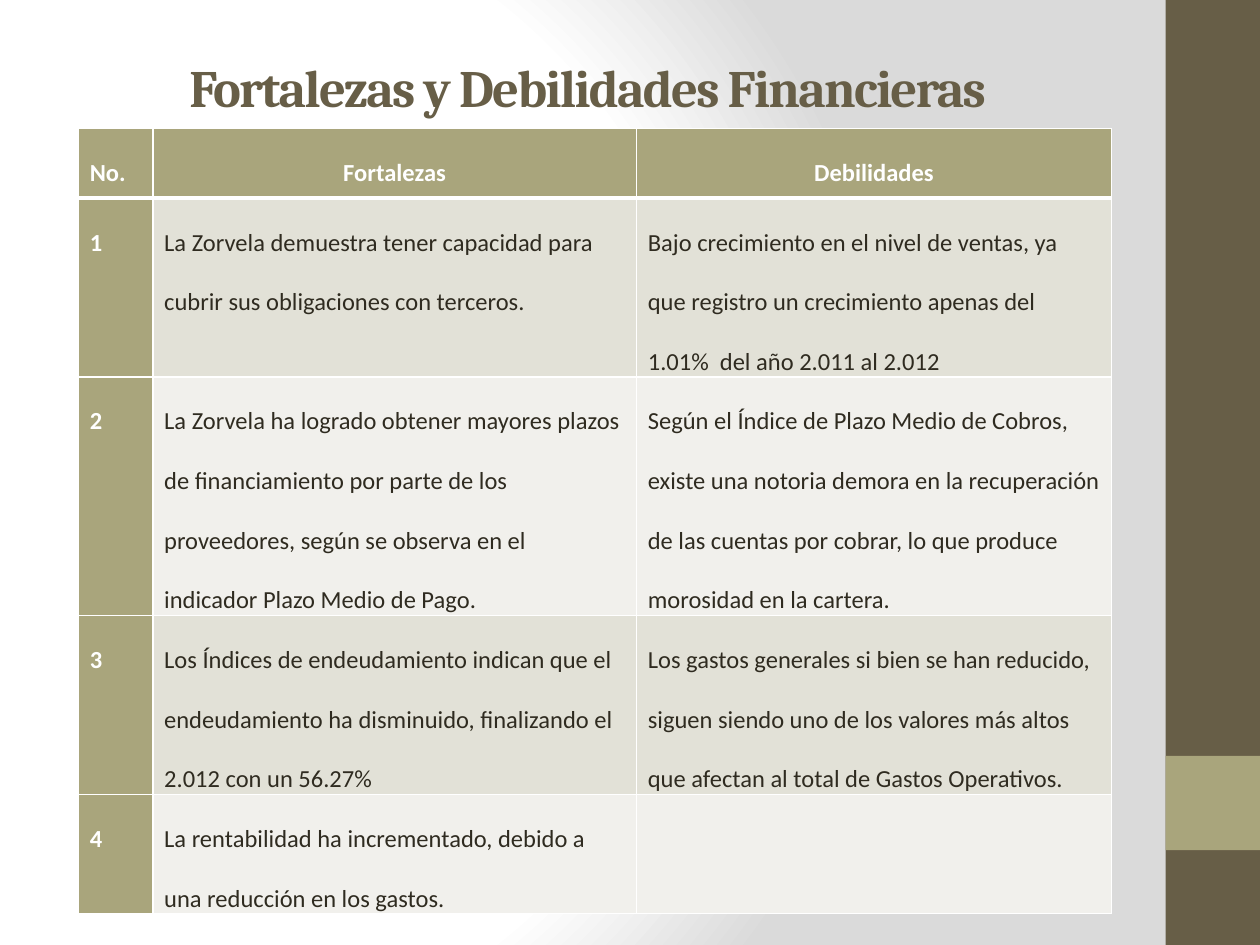
from pptx import Presentation
from pptx.dml.color import RGBColor
from pptx.enum.shapes import MSO_SHAPE
from pptx.enum.text import MSO_ANCHOR, PP_ALIGN
from pptx.oxml import parse_xml
from pptx.oxml.ns import nsdecls
from pptx.util import Cm, Pt

COLORS = {
    "brown": "675E47", "olive": "A9A57C", "white": "FFFFFF", "gray": "DADADA",
    "ink": "2F2B20", "band_dark": "E2E1D7", "band_light": "F1F0EC",
}


def write(paragraph, text, color, **font_format):
    run = paragraph.add_run()
    run.text = text
    run.font.color.rgb = RGBColor.from_string(COLORS[color])
    for name, value in font_format.items():
        setattr(run.font, name, value)
    return run


def add_borders(cell, widths):
    properties = cell._tc.get_or_add_tcPr()
    for index, (side, width) in enumerate(widths.items()):
        properties.insert(index, parse_xml(
            f'<a:ln{side} {nsdecls("a")} w="{Pt(width)}"><a:solidFill>'
            f'<a:srgbClr val="{COLORS["white"]}"/></a:solidFill></a:ln{side}>'))


presentation = Presentation()
presentation.slide_width = Cm(25.4)
presentation.slide_height = Cm(19.05)
slide = presentation.slides.add_slide(presentation.slide_layouts[5])

stops = "".join(
    f'<a:gs pos="{position * 1000}"><a:srgbClr val="{COLORS[color]}"/></a:gs>'
    for position, color in ((0, "white"), (75, "white"), (100, "gray")))
slide.element.cSld.insert(0, parse_xml(
    f'<p:bg {nsdecls("p", "a")}><p:bgPr><a:gradFill rotWithShape="1">'
    f'<a:gsLst>{stops}</a:gsLst><a:path path="circle">'
    '<a:fillToRect l="20000" t="50000" r="100000" b="50000"/></a:path>'
    '</a:gradFill><a:effectLst/></p:bgPr></p:bg>'))

for top, height, color in ((0, 19.05, "brown"), (15.24, 1.9, "olive")):
    bar = slide.shapes.add_shape(
        MSO_SHAPE.RECTANGLE, Cm(23.5), Cm(top), Cm(1.9), Cm(height))
    bar.shadow.inherit = False
    bar.fill.solid()
    bar.fill.fore_color.rgb = RGBColor.from_string(COLORS[color])
    bar.line.fill.background()

title = slide.shapes.title
title_place = {"left": 1.27, "top": 0.76, "width": 21.16, "height": 3.18}
for name, value in title_place.items():
    setattr(title, name, Cm(value))
title_frame = title.text_frame
frame_format = {"vertical_anchor": MSO_ANCHOR.TOP, "margin_top": Cm(0.34), "word_wrap": True}
for name, value in frame_format.items():
    setattr(title_frame, name, value)
title_paragraph = title_frame.paragraphs[0]
title_paragraph.alignment = PP_ALIGN.CENTER
title_run = write(title_paragraph, "Fortalezas y Debilidades Financieras", "brown",
                  size=Pt(30), name="Cambria", bold=True)
title_run.font._element.set("spc", "-100")

rows = [
    ("No.", "Fortalezas", "Debilidades"),
    ("1", "La Zorvela demuestra tener capacidad para cubrir sus obligaciones con terceros.",
     "Bajo crecimiento en el nivel de ventas, ya que registro un crecimiento apenas "
     "del 1.01%  del año 2.011 al 2.012"),
    ("2", "La Zorvela ha logrado obtener mayores plazos de financiamiento por parte de los "
     "proveedores, según se observa en el indicador Plazo Medio de Pago.",
     "Según el Índice de Plazo Medio de Cobros, existe una notoria demora en la "
     "recuperación de las cuentas por cobrar, lo que produce morosidad en la cartera."),
    ("3", "Los Índices de endeudamiento indican que el endeudamiento ha disminuido, "
     "finalizando el 2.012 con un 56.27%",
     "Los gastos generales si bien se han reducido, siguen siendo uno de los valores "
     "más altos que afectan al total de Gastos Operativos."),
    ("4", "La rentabilidad ha incrementado, debido a una reducción en los gastos.", ""),
]
column_widths = [1.5, 9.75, 9.58]
line_height = 1.2
row_heights = [1.4] + [lines * line_height for lines in (3, 4, 3, 2)]
table = slide.shapes.add_table(
    len(rows), len(column_widths), Cm(1.58), Cm(2.59),
    Cm(sum(column_widths)), Cm(sum(row_heights))).table
for column, width in zip(table.columns, column_widths):
    column.width = Cm(width)
for row, height in zip(table.rows, row_heights):
    row.height = Cm(height)

cell_margins = {"margin_left": 0.23, "margin_right": 0.23, "margin_top": 0, "margin_bottom": 0}
for row_index, texts in enumerate(rows):
    for column_index, text in enumerate(texts):
        cell = table.cell(row_index, column_index)
        is_header = row_index == 0
        is_heading = is_header or column_index == 0
        band = "band_dark" if row_index % 2 else "band_light"
        for name, value in cell_margins.items():
            setattr(cell, name, Cm(value))
        cell.fill.solid()
        cell.fill.fore_color.rgb = RGBColor.from_string(
            COLORS["olive" if is_heading else band])
        add_borders(cell, {"L": 1, "R": 1, "T": 3 if row_index == 1 else 1,
                           "B": 3 if is_header else 1})
        paragraph = cell.text_frame.paragraphs[0]
        paragraph.line_spacing = 2.0
        if is_header and column_index:
            paragraph.alignment = PP_ALIGN.CENTER
        if text:
            write(paragraph, text, "white" if is_heading else "ink",
                  size=Pt(14), name="Calibri", bold=is_heading)

presentation.save("out.pptx")
